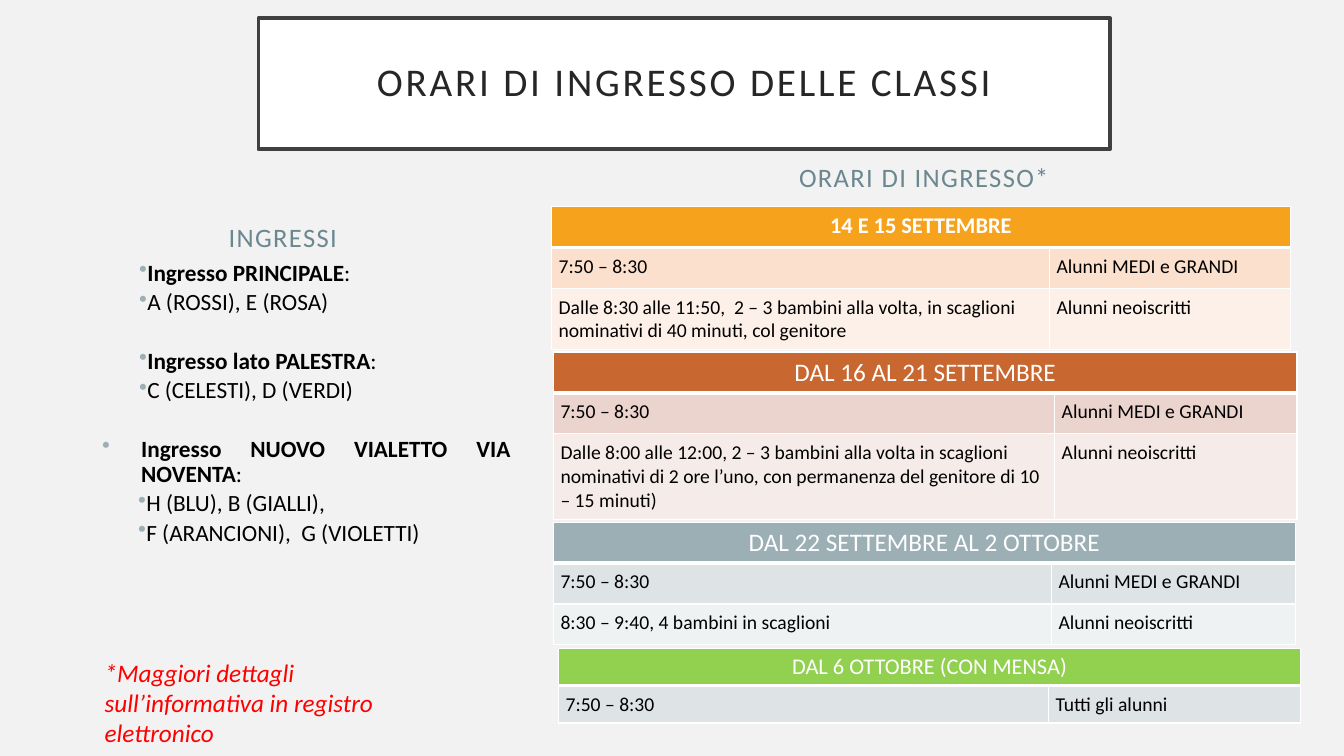
"""Builds the slide with the entry times of the school classes."""
from dataclasses import dataclass

from lxml import etree
from pptx import Presentation
from pptx.dml.color import RGBColor
from pptx.enum import text as t
from pptx.oxml import ns
from pptx.util import Pt


@dataclass(frozen=True)
class Theme:
    face: str = "Calibri"
    back: str = "F2F2F2"
    white: str = "FFFFFF"
    black: str = "000000"
    frame: str = "404040"
    title: str = "262626"
    head: str = "6B8891"
    dot: str = "9BAFB5"
    note: str = "FF0000"
    big: float = 28
    mid: float = 19
    list: float = 16.6
    cell: float = 14
    foot: float = 18


@dataclass(frozen=True)
class Box:
    left: float
    top: float
    width: float
    height: float


@dataclass(frozen=True)
class Label:
    text: str
    box: Box
    size: float
    color: str
    track: int = 0
    italic: bool = False
    center: bool = True


@dataclass(frozen=True)
class Item:
    bold: str
    plain: str
    margin: float = 18
    indent: float = 22.3
    before: float = 3


@dataclass(frozen=True)
class Plan:
    head: str
    left: float
    top: float
    cols: tuple[float, float]
    highs: tuple[float, ...]
    size: float
    fill: str
    tints: tuple[str, ...]
    rows: tuple[tuple[str, str], ...]
    bold: bool = False


LOOK = Theme()
TITLE = Label("ORARI DI INGRESSO DELLE CLASSI", Box(184.5, 13, 608.5, 93.6),
              LOOK.big, LOOK.title, 200)
LABELS = (
    Label("INGRESSI", Box(34, 129, 336, 55.5), LOOK.mid, LOOK.head, 100),
    Label("ORARI DI INGRESSO*", Box(398, 109.5, 524, 31.5),
          LOOK.mid, LOOK.head, 100),
    Label("*Maggiori dettagli sull’informativa in registro elettronico",
          Box(67.7, 465.8, 260, 51), LOOK.foot, LOOK.note,
          italic=True, center=False),
)
LIST = Box(52, 183, 319.5, 265)
ITEMS = (
    Item("Ingresso PRINCIPALE", ":"),
    Item("", "A (ROSSI), E (ROSA)"),
    Item("Ingresso lato PALESTRA", ":", before=24),
    Item("", "C (CELESTI), D (VERDI)"),
    Item("Ingresso NUOVO VIALETTO VIA NOVENTA", ":", 41.8, -28, 24),
    Item("", "H (BLU), B (GIALLI),", 41.8, -2.2),
    Item("", "F (ARANCIONI),  G (VIOLETTI)", 41.8, -2.2),
)
OLD, NEW = "Alunni MEDI e GRANDI", "Alunni neoiscritti"
PLANS = (
    Plan("14 E 15 SETTEMBRE", 394, 147.6, (355.7, 172), (29.2, 29.2, 43.6),
         16, "F6A21D", ("FBE0CD", "FDF0E8"),
         (("7:50 – 8:30", OLD),
          ("Dalle 8:30 alle 11:50,  2 – 3 bambini alla volta, in scaglioni "
           "nominativi di 40 minuti, col genitore", NEW)), True),
    Plan("DAL 16 AL 21 SETTEMBRE", 395.4, 251.5, (358, 173),
         (29.2, 29.2, 61), 18, "C96731", ("EBD3CE", "F5EBE8"),
         (("7:50 – 8:30", OLD),
          ("Dalle 8:00 alle 12:00, 2 – 3 bambini alla volta in scaglioni "
           "nominativi di 2 ore l’uno, con permanenza del genitore di "
           "10 – 15 minuti)", NEW))),
    Plan("DAL 22 SETTEMBRE AL 2 OTTOBRE", 395.4, 373, (355.7, 174),
         (29.2, 29.2, 29.2), 18, "9BAFB5", ("DEE3E5", "EFF2F3"),
         (("7:50 – 8:30", OLD),
          ("8:30 – 9:40, 4 bambini in scaglioni", NEW))),
    Plan("DAL 6 OTTOBRE (CON MENSA)", 399, 463, (350, 180), (26.6, 26.6),
         16, "92D050", ("DEE3E5",), (("7:50 – 8:30", "Tutti gli alunni"),)),
)


def rgb(code: str) -> RGBColor:
    return RGBColor.from_string(code)


def style(para, size: float, color: str, bold: bool = False) -> None:
    font = para.font
    font.name, font.size, font.bold = LOOK.face, Pt(size), bold
    font.color.rgb = rgb(color)


def place(shape, box: Box) -> None:
    shape.left, shape.top = Pt(box.left), Pt(box.top)
    shape.width, shape.height = Pt(box.width), Pt(box.height)


def write(frame, label: Label) -> None:
    frame.word_wrap = True
    frame.auto_size = t.MSO_AUTO_SIZE.NONE
    para = frame.paragraphs[0]
    para.text = label.text
    style(para, label.size, label.color)
    para.font.italic = label.italic
    if label.center:
        para.alignment = t.PP_ALIGN.CENTER
        frame.vertical_anchor = t.MSO_ANCHOR.BOTTOM
    if label.track:
        para._p.pPr.get_or_add_defRPr().set("spc", str(label.track))


def add_text(slide, box: Box):
    shape = slide.shapes.add_textbox(0, 0, 0, 0)
    place(shape, box)
    shape.text_frame.word_wrap = True
    return shape.text_frame


def set_title(slide) -> None:
    shape = slide.shapes.title
    place(shape, TITLE.box)
    shape.fill.solid()
    shape.fill.fore_color.rgb = rgb(LOOK.white)
    shape.line.color.rgb = rgb(LOOK.frame)
    shape.line.width = Pt(2.5)
    write(shape.text_frame, TITLE)
    shape.text_frame.vertical_anchor = t.MSO_ANCHOR.MIDDLE
    shape.text_frame.paragraphs[0].line_spacing = 0.9


def add_item(para, item: Item) -> None:
    para.alignment = t.PP_ALIGN.JUSTIFY
    para.line_spacing, para.space_before = 0.9, Pt(item.before)
    style(para, LOOK.list, LOOK.black)
    if item.bold:
        run = para.add_run()
        run.text, run.font.bold = item.bold, True
    para.add_run().text = item.plain
    props = para._p.pPr
    props.set("marL", str(Pt(item.margin)))
    props.set("indent", str(Pt(item.indent)))
    tone = etree.Element(ns.qn("a:buClr"))
    etree.SubElement(tone, ns.qn("a:srgbClr"), val=LOOK.dot)
    mark = etree.Element(ns.qn("a:buChar"), char="•")
    for node in (tone, mark):
        props.get_or_add_defRPr().addprevious(node)


def edge(cell, row: int) -> None:
    props = cell._tc.get_or_add_tcPr()
    thick = {"T": row == 1, "B": row == 0}
    for side in "LRTB":
        width = Pt(3 if thick.get(side) else 1)
        line = etree.SubElement(props, ns.qn(f"a:ln{side}"), w=str(width))
        fill = etree.SubElement(line, ns.qn("a:solidFill"))
        etree.SubElement(fill, ns.qn("a:srgbClr"), val=LOOK.white)


def add_plan(slide, plan: Plan) -> None:
    grid = slide.shapes.add_table(
        len(plan.highs), 2, Pt(plan.left), Pt(plan.top),
        Pt(sum(plan.cols)), Pt(sum(plan.highs))).table
    grid.first_row = grid.horz_banding = False
    for col, width in zip(grid.columns, plan.cols):
        col.width = Pt(width)
    rows = ((plan.head, ""), *plan.rows)
    fills = (plan.fill, *plan.tints)
    for r, (words, fill, high) in enumerate(zip(rows, fills, plan.highs)):
        grid.rows[r].height = Pt(high)
        for c, word in enumerate(words):
            cell = grid.cell(r, c)
            edge(cell, r)
            cell.fill.solid()
            cell.fill.fore_color.rgb = rgb(fill)
            para = cell.text_frame.paragraphs[0]
            para.text = word
            if r:
                cell.margin_left = cell.margin_right = Pt(5)
                cell.margin_top = cell.margin_bottom = Pt(5)
                style(para, LOOK.cell, LOOK.black)
            else:
                para.alignment = t.PP_ALIGN.CENTER
                style(para, plan.size, LOOK.white, plan.bold)
    grid.cell(0, 0).merge(grid.cell(0, 1))


def main() -> None:
    deck = Presentation()
    deck.slide_width, deck.slide_height = Pt(960), Pt(540)
    slide = deck.slides.add_slide(deck.slide_layouts.get_by_name("Title Only"))
    slide.background.fill.solid()
    slide.background.fill.fore_color.rgb = rgb(LOOK.back)
    set_title(slide)
    for label in LABELS:
        write(add_text(slide, label.box), label)
    frame = add_text(slide, LIST)
    for i, item in enumerate(ITEMS):
        add_item(frame.add_paragraph() if i else frame.paragraphs[0], item)
    for plan in PLANS:
        add_plan(slide, plan)
    deck.save("out.pptx")


if __name__ == "__main__":
    main()
